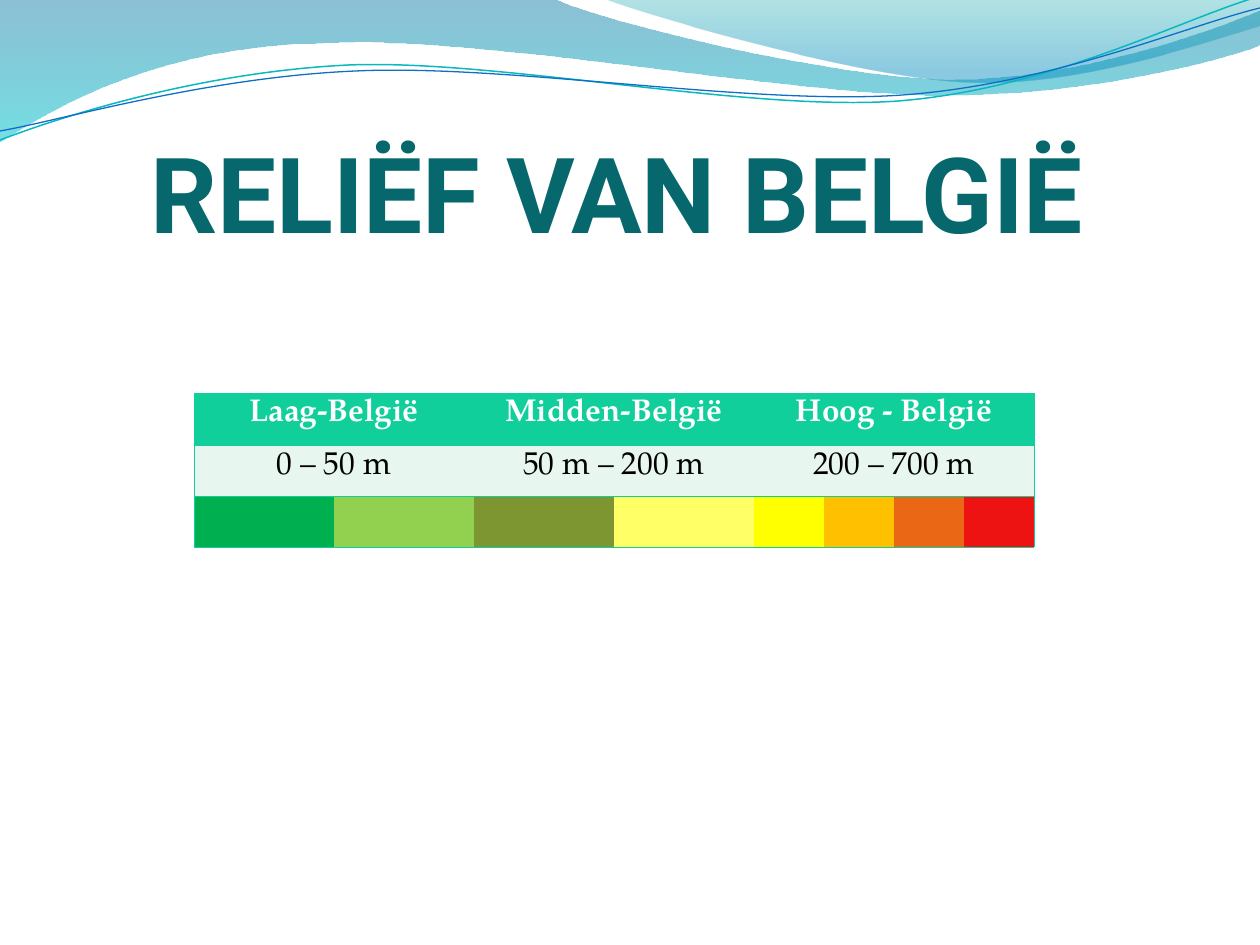
from itertools import product

from lxml.etree import SubElement
from pptx import Presentation
from pptx.dml.color import RGBColor
from pptx.enum.text import MSO_ANCHOR as Anchor, PP_ALIGN as Align
from pptx.oxml.ns import qn
from pptx.util import Emu, Pt

EMU_PER_PX = 914400 / 126
NO_STYLE = "{2D5ABB26-0587-4C30-8999-92F81FD0307C}"
GREEN = "10CF9B"

# Each outline: start point, then segments of one point (line) or three (Bézier).
WAVES = [
    ((0, 0), [
        [(554, -1)],
        [(600, 21), (837, 79), (955, 79)],
        [(1075, 79), (1207, 33), (1260, 11)],
        [(1261, 45)],
        [(1239, 55), (1096, 96), (940, 95)],
        [(784, 95), (481, 35), (324, 43)],
        [(163, 45), (58, 105), (-1, 142)],
        [(0, 0)],
    ], [(0, "0074A1", 45), (1, "00C6CF", 55)]),
    ((604, -1), [
        [(641, 14), (859, 78), (969, 82)],
        [(1079, 87), (1211, 40), (1260, 26)],
        [(1260, 0)],
        [(604, -1)],
    ], [(0, "00A1A9", 30), (0.8, "008BBF", 45)]),
]
STROKES = [
    ((0, 140), [
        [(60, 117), (199, 72), (349, 65)],
        [(498, 59), (747, 112), (898, 101)],
        [(1050, 89), (1182, 19), (1257, -3)],
    ], "0AB8BF", 0.85),
    ((0, 131), [
        [(59, 121), (207, 77), (357, 71)],
        [(508, 64), (752, 106), (903, 95)],
        [(1053, 84), (1186, 26), (1260, 8)],
    ], "0F6FC6", 0.75),
]

COLUMNS = [140] * 4 + [70] * 4
ROWS = [52, 51, 51]
SPANS = [(0, 1), (2, 3), (4, 7)]
TEXT_ROWS = [
    (["Laag-België", "Midden-België", "Hoog - België"], GREEN, "FFFFFF", True),
    (["0 – 50 m", "50 m – 200 m", "200 – 700 m"], "E7F6EF", "000000", False),
]
HEIGHT_COLOURS = ["00B050", "92D050", "7E9632", "FFFF66",
                  "FFFF00", "FFC000", "EA6716", "ED1313"]


def px(length):
    return Emu(round(length * EMU_PER_PX))


def colour(hex_value):
    return RGBColor.from_string(hex_value)


def write(frame, text, size, font, hex_value, bold):
    para = frame.paragraphs[0]
    para.alignment = Align.CENTER
    span = para.add_run()
    span.text = text
    for name, value in {"size": Pt(size), "name": font, "bold": bold}.items():
        setattr(span.font, name, value)
    span.font.color.rgb = colour(hex_value)


def draw_outline(page, box, start, segments, close):
    """Build a freeform through all points, then bend each three-point segment."""
    points = [(px(x), px(y)) for segment in segments for x, y in segment]
    builder = page.shapes.build_freeform(*map(px, start), scale=1.0)
    builder.add_line_segments(points, close=close)
    shape = builder.convert_to_shape(px(box[0]), px(box[1]))
    shape.shadow.inherit = False

    steps = iter(list(shape.element.spPr.iter(qn("a:lnTo"))))
    for segment in segments:
        group = [next(steps) for _ in segment]
        if len(group) == 3:
            curve = group[0].makeelement(qn("a:cubicBezTo"))
            group[0].addprevious(curve)
            for step in group:
                curve.append(step[0])
                step.getparent().remove(step)
    return shape


def add_waves(page, box):
    for start, segments, stops in WAVES:
        wave = draw_outline(page, box, start, segments, True)
        wave.line.fill.background()
        wave.fill.gradient()
        wave.fill.gradient_angle = 270
        for stop, (position, hex_value, _) in zip(wave.fill.gradient_stops, stops):
            stop.position = position
            stop.color.rgb = colour(hex_value)
        nodes = wave.element.spPr.iter(qn("a:srgbClr"))
        for node, (_, _, alpha) in zip(nodes, stops):
            SubElement(node, qn("a:alpha"), val=str(alpha * 1000))
    for start, segments, hex_value, width in STROKES:
        stroke = draw_outline(page, box, start, segments, False)
        stroke.fill.background()
        stroke.line.color.rgb = colour(hex_value)
        stroke.line.width = Pt(width)


def add_title(page, box):
    frame = page.shapes.add_textbox(*map(px, box)).text_frame
    settings = {"word_wrap": True, "vertical_anchor": Anchor.BOTTOM,
                "margin_left": 0, "margin_top": px(6),
                "margin_right": 0, "margin_bottom": 0}
    for name, value in settings.items():
        setattr(frame, name, value)
    write(frame, "RELIËF VAN BELGIË ", 60, "Roboto", "06686C", True)


def add_borders(cell, sides):
    properties = cell._tc.get_or_add_tcPr()
    for side in sides:
        line = SubElement(properties, qn(f"a:ln{side}"), w=str(Pt(0.5)))
        fill = SubElement(line, qn("a:solidFill"))
        SubElement(fill, qn("a:srgbClr"), val=GREEN)


def fill_cell(cell, hex_value):
    cell.fill.solid()
    cell.fill.fore_color.rgb = colour(hex_value)


def add_height_table(page, box):
    table = page.shapes.add_table(len(ROWS), len(COLUMNS), *map(px, box)).table
    table._tbl.tblPr.find(qn("a:tableStyleId")).text = NO_STYLE
    for column, width in zip(table.columns, COLUMNS):
        column.width = px(width)
    for row, height in zip(table.rows, ROWS):
        row.height = px(height)

    for row, (labels, back, ink, bold) in enumerate(TEXT_ROWS):
        for label, (first, end) in zip(labels, SPANS):
            cell = table.cell(row, first)
            cell.merge(table.cell(row, end))
            write(cell.text_frame, label, 18, "TeX Gyre Pagella", ink, bold)

    last = len(COLUMNS) - 1
    for row, column in product(range(len(ROWS)), range(len(COLUMNS))):
        cell = table.cell(row, column)
        if cell.is_spanned:
            continue
        end = column + cell.span_width - 1 if cell.is_merge_origin else column
        add_borders(cell, "L" * (column == 0) + "R" * (end == last) + "TB")
        fill_cell(cell, TEXT_ROWS[row][1] if row < len(TEXT_ROWS)
                  else HEIGHT_COLOURS[column])


def main():
    deck = Presentation()
    deck.slide_width, deck.slide_height = px(1260), px(945)
    page = deck.slides.add_slide(deck.slide_layouts[6])
    add_waves(page, (0, 0, 1260, 142))
    add_title(page, (63, 97, 1134, 157))
    add_height_table(page, (194, 393, sum(COLUMNS), sum(ROWS)))
    deck.save("out.pptx")


if __name__ == "__main__":
    main()
